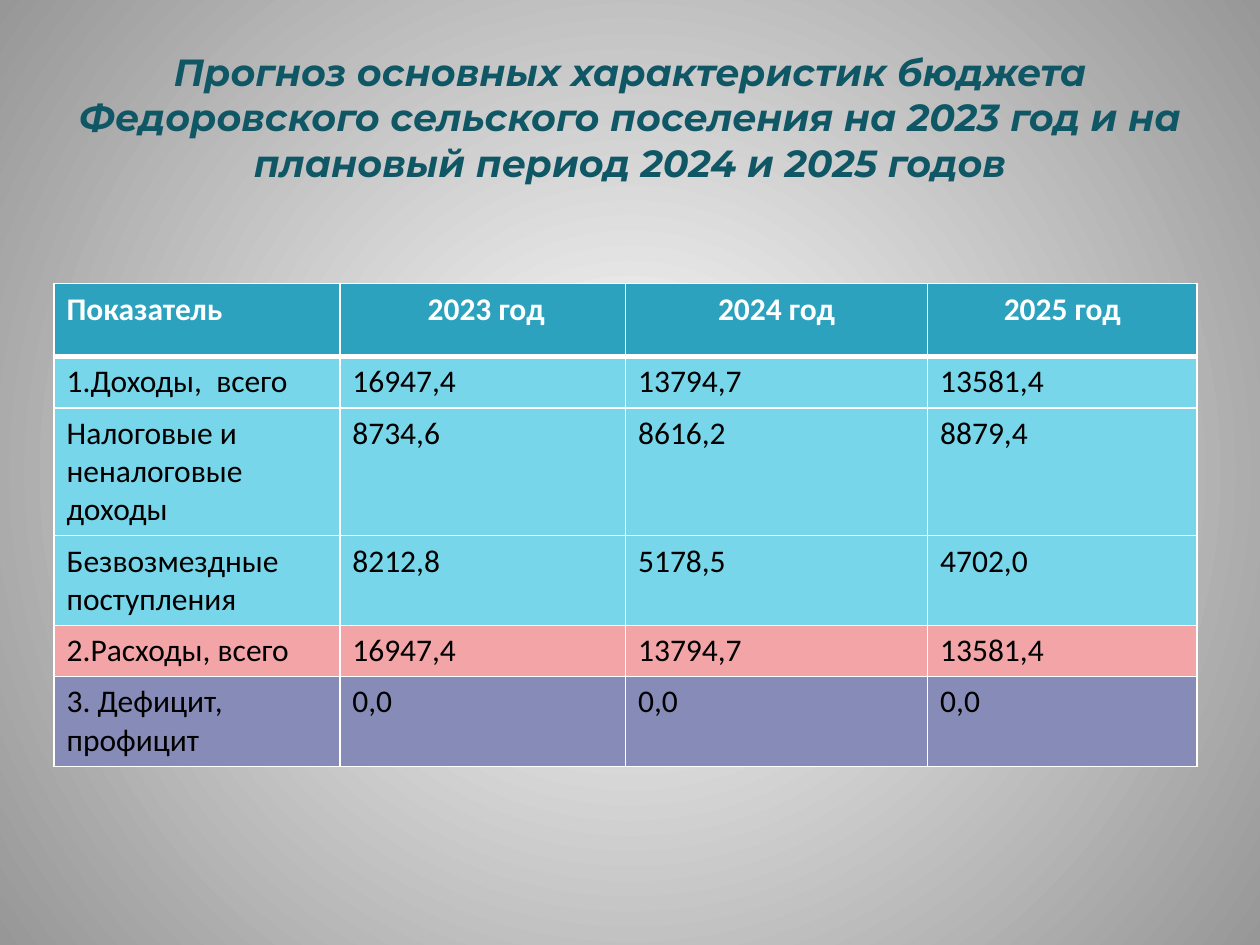
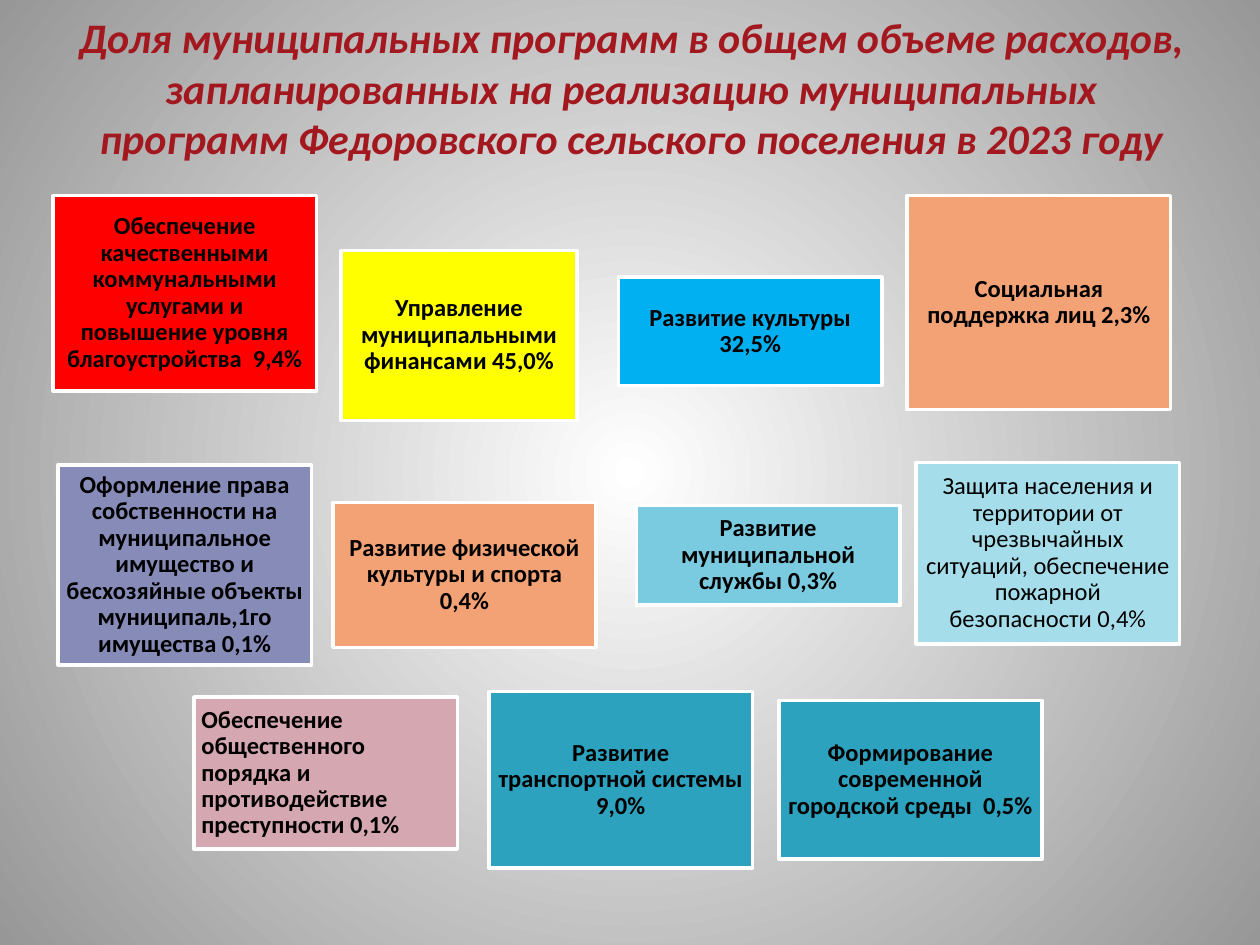
import dataclasses
import typing

import pptx
import pptx.dml.color
import pptx.enum.shapes
import pptx.enum.text
import pptx.oxml
import pptx.oxml.ns
import pptx.util
from lxml import etree

Cm = pptx.util.Cm
Pt = pptx.util.Pt
qn = pptx.oxml.ns.qn
CENTER = pptx.enum.text.PP_ALIGN.CENTER
LEFT = pptx.enum.text.PP_ALIGN.LEFT
MIDDLE = pptx.enum.text.MSO_ANCHOR.MIDDLE
TITLE_ONLY = 5

COLORS: dict[str, str] = {
    "white": "FFFFFF",
    "black": "000000",
    "backdrop": "979797",
    "budget title": "105766",
    "programme title": "A3171E",
    "teal": "2DA2BF",
    "income": "78D6EA",
    "expense": "F2A4A7",
    "violet": "878BB8",
    "red": "FF0000",
    "yellow": "FFFF00",
    "blue": "00B0F0",
    "orange": "F3A276",
    "light teal": "7ACBE0",
    "pale teal": "A6DDEA",
    "rose": "D5A7B1",
}

# Character formats
BUDGET_TITLE = {"name": "Montserrat", "size": Pt(21.6), "bold": True, "italic": True}
PROGRAMME_TITLE = {"name": "Calibri", "size": Pt(24), "bold": True, "italic": True}
TABLE_HEAD = {"name": "Calibri", "size": Pt(18), "bold": True}
TABLE_BODY = {**TABLE_HEAD, "bold": False}
BOX_BOLD = {"name": "Calibri", "size": Pt(14), "bold": True}
BOX_PLAIN = {**BOX_BOLD, "bold": False}

# Text frame formats
TITLE_FRAME = {
    "word_wrap": True,
    "vertical_anchor": MIDDLE,
    "auto_size": pptx.enum.text.MSO_AUTO_SIZE.NONE,
}
BOX_MARGIN = Cm(0.15)
BOX_FRAME = {
    "word_wrap": True,
    "vertical_anchor": MIDDLE,
    "margin_left": BOX_MARGIN,
    "margin_right": BOX_MARGIN,
    "margin_top": BOX_MARGIN,
    "margin_bottom": BOX_MARGIN,
}


@dataclasses.dataclass(frozen=True)
class Title:
    text: str
    left: float
    top: float
    height: float
    color: str
    font: dict[str, typing.Any]


@dataclasses.dataclass(frozen=True)
class BudgetRow:
    cells: tuple[str, ...]
    height: float
    fill: str


@dataclasses.dataclass(frozen=True)
class ProgrammeBox:
    text: str
    left: float
    top: float
    height: float
    fill: str
    width: float = 5.31
    alignment: typing.Any = CENTER
    font: dict[str, typing.Any] = dataclasses.field(default_factory=lambda: BOX_BOLD)


BUDGET_SLIDE_TITLE = Title(
    "Прогноз основных характеристик бюджета Федоровского сельского поселения "
    "на 2023 год и на плановый период 2024 и 2025 годов",
    1.27, 0.76, 3.18, "budget title", BUDGET_TITLE)
PROGRAMME_SLIDE_TITLE = Title(
    "Доля муниципальных программ в общем объеме расходов, запланированных "
    "на реализацию муниципальных программ Федоровского сельского поселения в 2023 году",
    1.3, 0, 3.53, "programme title", PROGRAMME_TITLE)

COLUMN_WIDTHS = (5.76, 5.76, 6.09, 5.43)
BUDGET_ROWS = (
    BudgetRow(("Показатель", " 2023 год", "2024 год", "2025 год"), 1.47, "teal"),
    BudgetRow(("1.Доходы,  всего", "16947,4", "13794,7", "13581,4"), 1.03, "income"),
    BudgetRow(("Налоговые и неналоговые доходы", "8734,6", "8616,2", "8879,4"), 2.58, "income"),
    BudgetRow(("Безвозмездные поступления", "8212,8", "5178,5", "4702,0"), 1.81, "income"),
    BudgetRow(("2.Расходы, всего", "16947,4", "13794,7", "13581,4"), 1.03, "expense"),
    BudgetRow(("3. Дефицит, профицит", "0,0", "0,0", "0,0"), 1.81, "violet"),
)

PROGRAMME_BOXES = (
    ProgrammeBox("Обеспечение качественными коммунальными услугами и повышение "
                 "уровня благоустройства  9,4%", 1.07, 3.94, 3.94, "red"),
    ProgrammeBox("Управление муниципальными финансами 45,0%",
                 6.88, 5.05, 3.43, "yellow", width=4.75),
    ProgrammeBox("Развитие культуры 32,5%", 12.47, 5.59, 2.18, "blue"),
    ProgrammeBox("Социальная поддержка лиц 2,3%", 18.29, 3.94, 4.32, "orange"),
    ProgrammeBox("Оформление права собственности на муниципальное имущество и "
                 "бесхозяйные объекты муниципаль,1го имущества 0,1%",
                 1.17, 9.37, 4.04, "violet", width=5.11),
    ProgrammeBox("Развитие физической культуры и спорта 0,4%",
                 6.71, 10.13, 2.92, "orange"),
    ProgrammeBox("Развитие муниципальной службы 0,3%", 12.83, 10.19, 2.01, "light teal"),
    ProgrammeBox("Защита населения и территории от чрезвычайных ситуаций, "
                 "обеспечение пожарной безопасности 0,4%",
                 18.47, 9.32, 3.66, "pale teal", font=BOX_PLAIN),
    ProgrammeBox("Обеспечение общественного порядка и противодействие преступности 0,1%",
                 3.91, 14.05, 3.07, "rose", alignment=LEFT),
    ProgrammeBox("Развитие транспортной системы 9,0%", 9.86, 13.94, 3.56, "teal"),
    ProgrammeBox("Формирование современной городской среды  0,5%",
                 15.7, 14.12, 3.2, "teal"),
)


def rgb(name: str) -> pptx.dml.color.RGBColor:
    return pptx.dml.color.RGBColor.from_string(COLORS[name])


def apply_format(target: typing.Any, values: dict[str, typing.Any]) -> None:
    for attribute, value in values.items():
        setattr(target, attribute, value)


def fill_solid(target: typing.Any, color: str) -> None:
    target.fill.solid()
    target.fill.fore_color.rgb = rgb(color)


def write_text(text_frame: typing.Any, text: str, font: dict[str, typing.Any],
               color: str, alignment: typing.Any) -> typing.Any:
    paragraph = text_frame.paragraphs[0]
    paragraph.alignment = alignment
    run = paragraph.add_run()
    run.text = text
    apply_format(run.font, font)
    run.font.color.rgb = rgb(color)
    return paragraph


def set_background(master: typing.Any) -> None:
    """Radial gradient shared by all slides."""
    fill = master.background.fill
    fill.gradient()
    for stop, color in zip(fill.gradient_stops, ("white", "backdrop")):
        stop.color.rgb = rgb(color)
    gradient = next(master.element.iter(qn("a:gradFill")))
    gradient.remove(gradient.find(qn("a:lin")))
    circle = etree.SubElement(gradient, qn("a:path"), {"path": "circle"})
    etree.SubElement(circle, qn("a:fillToRect"), {side: "50000" for side in "ltrb"})


def add_titled_slide(presentation: typing.Any, title: Title) -> typing.Any:
    slide = presentation.slides.add_slide(presentation.slide_layouts[TITLE_ONLY])
    shape = slide.shapes.title
    apply_format(shape, {"left": Cm(title.left), "top": Cm(title.top),
                         "width": Cm(22.86), "height": Cm(title.height)})
    apply_format(shape.text_frame, TITLE_FRAME)
    write_text(shape.text_frame, title.text, title.font, title.color, CENTER)
    return slide


def set_borders(cell: typing.Any, widths: dict[str, float]) -> None:
    """Draw white cell borders; border lines come before the fill."""
    properties = cell._tc.get_or_add_tcPr()
    for position, (side, width) in enumerate(widths.items()):
        line = pptx.oxml.parse_xml(
            f'<a:ln{side} {pptx.oxml.ns.nsdecls("a")} w="{Pt(width)}"><a:solidFill>'
            f'<a:srgbClr val="{COLORS["white"]}"/></a:solidFill></a:ln{side}>')
        properties.insert(position, line)


def add_budget_table(slide: typing.Any) -> None:
    frame = slide.shapes.add_table(
        len(BUDGET_ROWS), len(COLUMN_WIDTHS), Cm(1.09), Cm(5.72),
        Cm(sum(COLUMN_WIDTHS)), Cm(sum(row.height for row in BUDGET_ROWS)))
    table = frame.table
    table.horz_banding = False
    for column, width in zip(table.columns, COLUMN_WIDTHS):
        column.width = Cm(width)
    for row_index, row in enumerate(BUDGET_ROWS):
        table.rows[row_index].height = Cm(row.height)
        is_head = row_index == 0
        font, color = (TABLE_HEAD, "white") if is_head else (TABLE_BODY, "black")
        borders = {"L": 1, "R": 1, "T": 3 if row_index == 1 else 1, "B": 3 if is_head else 1}
        for column_index, text in enumerate(row.cells):
            cell = table.cell(row_index, column_index)
            fill_solid(cell, row.fill)
            set_borders(cell, borders)
            alignment = CENTER if is_head and column_index else LEFT
            write_text(cell.text_frame, text, font, color, alignment)


def add_programme_box(slide: typing.Any, box: ProgrammeBox) -> None:
    shape = slide.shapes.add_shape(
        pptx.enum.shapes.MSO_SHAPE.RECTANGLE,
        Cm(box.left), Cm(box.top), Cm(box.width), Cm(box.height))
    shape.shadow.inherit = False
    fill_solid(shape, box.fill)
    shape.line.color.rgb = rgb("white")
    shape.line.width = Pt(2)
    apply_format(shape.text_frame, BOX_FRAME)
    paragraph = write_text(shape.text_frame, box.text, box.font, "black", box.alignment)
    paragraph.line_spacing = 0.9


def main() -> None:
    presentation = pptx.Presentation()
    presentation.slide_width = Cm(25.4)
    presentation.slide_height = Cm(19.05)
    set_background(presentation.slide_master)

    # Budget forecast
    add_budget_table(add_titled_slide(presentation, BUDGET_SLIDE_TITLE))

    # Shares of municipal programmes
    programme_slide = add_titled_slide(presentation, PROGRAMME_SLIDE_TITLE)
    for box in PROGRAMME_BOXES:
        add_programme_box(programme_slide, box)

    presentation.save("out.pptx")


if __name__ == "__main__":
    main()
